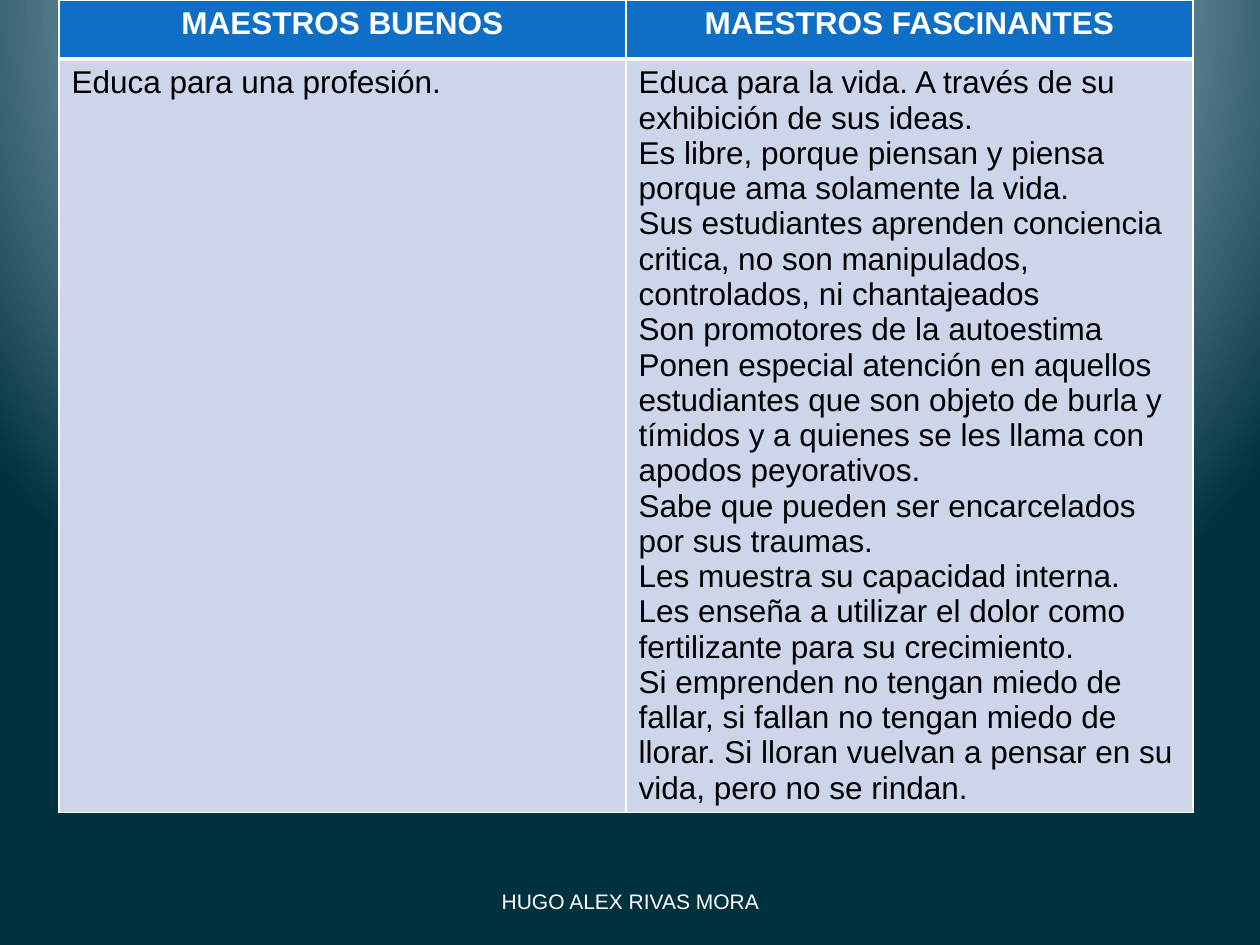
"""Build a slide comparing good teachers with fascinating teachers."""
from dataclasses import dataclass

from lxml import etree
from pptx import Presentation
from pptx.dml.color import RGBColor
from pptx.enum.text import MSO_ANCHOR, PP_ALIGN
from pptx.oxml import parse_xml
from pptx.oxml.ns import nsdecls, qn
from pptx.util import Emu, Pt

CENTER, LEFT = PP_ALIGN.CENTER, PP_ALIGN.LEFT
MIDDLE = MSO_ANCHOR.MIDDLE
EMU_PER_PIXEL = 914400 / 126


@dataclass(frozen=True)
class Theme:
    """Colours, type sizes and line widths of the slide."""
    font: str = "Arial"
    white: str = "FFFFFF"
    black: str = "000000"
    header_fill: str = "0F6FC6"
    body_fill: str = "CCD5EA"
    table_size: int = 18
    footer_size: int = 12
    thin: int = 1
    thick: int = 3
    gradient: tuple = ((0, "BFD5E4"), (40, "B4CEE0"), (100, "00313F"))


@dataclass(frozen=True)
class TextStyle:
    """Look of the text in a frame."""
    color: str
    size: int
    bold: bool = False
    alignment: PP_ALIGN = LEFT


@dataclass(frozen=True)
class RowStyle:
    """Look of one table row."""
    height: int
    fill: str
    text: TextStyle
    top: int
    bottom: int


@dataclass(frozen=True)
class Column:
    """Heading and statements about one kind of teacher."""
    heading: str
    statements: tuple


THEME = Theme()
HEADER = RowStyle(59, THEME.header_fill,
                  TextStyle(THEME.white, THEME.table_size, True, CENTER),
                  THEME.thin, THEME.thick)
BODY = RowStyle(679, THEME.body_fill, TextStyle(THEME.black, THEME.table_size),
                THEME.thick, THEME.thin)
COLUMN_WIDTH = 567
COLUMNS = (
    Column("MAESTROS BUENOS", ("Educa para una profesión.",)),
    Column("MAESTROS FASCINANTES", (
        "Educa para la vida. A través de su exhibición de sus ideas.",
        "Es libre, porque piensan y piensa porque ama solamente la vida.",
        "Sus estudiantes aprenden conciencia critica, no son manipulados, "
        "controlados, ni chantajeados",
        "Son promotores de la autoestima",
        "Ponen especial atención en aquellos estudiantes que son objeto de burla "
        "y tímidos y a quienes se les llama con apodos peyorativos.",
        "Sabe que pueden ser encarcelados por sus traumas.",
        "Les muestra su capacidad interna.",
        "Les enseña a utilizar el dolor como fertilizante para su crecimiento.",
        "Si emprenden no tengan miedo de fallar, si fallan no tengan miedo de "
        "llorar. Si lloran vuelvan a pensar en su vida, pero no se rindan.",
    )),
)


def px(length: int) -> Emu:
    """Turn pixels into EMU."""
    return Emu(round(length * EMU_PER_PIXEL))


def write_text(text_frame, lines: tuple, style: TextStyle) -> None:
    """Write one formatted paragraph for each line."""
    text_frame.text = "\n".join(lines)
    font_format = {"name": THEME.font, "size": Pt(style.size), "bold": style.bold}
    for paragraph in text_frame.paragraphs:
        paragraph.alignment = style.alignment
        for run in paragraph.runs:
            for name, value in font_format.items():
                setattr(run.font, name, value)
            run.font.color.rgb = RGBColor.from_string(style.color)


def draw_background(slide) -> None:
    """Fill the background with a circular gradient centred above and below."""
    stops = "".join(
        f'<a:gs pos="{position * 1000}"><a:srgbClr val="{color}"/></a:gs>'
        for position, color in THEME.gradient)
    background = parse_xml(
        f'<p:bg {nsdecls("p", "a")}><p:bgPr><a:gradFill rotWithShape="1">'
        f'<a:gsLst>{stops}</a:gsLst><a:path path="circle">'
        '<a:fillToRect l="50000" t="-80000" r="50000" b="180000"/></a:path>'
        '</a:gradFill><a:effectLst/></p:bgPr></p:bg>')
    slide.element.cSld.insert(0, background)


def draw_borders(cell, style: RowStyle) -> None:
    """Give a cell white lines on its four sides."""
    properties = cell._tc.get_or_add_tcPr()
    widths = {"a:lnL": THEME.thin, "a:lnR": THEME.thin,
              "a:lnT": style.top, "a:lnB": style.bottom}
    for side, width in widths.items():
        line = etree.SubElement(properties, qn(side), w=str(Pt(width)))
        fill = etree.SubElement(line, qn("a:solidFill"))
        etree.SubElement(fill, qn("a:srgbClr"), val=THEME.white)


def draw_cell(cell, lines: tuple, style: RowStyle) -> None:
    """Draw the lines, fill and text of a cell."""
    draw_borders(cell, style)
    cell.fill.solid()
    cell.fill.fore_color.rgb = RGBColor.from_string(style.fill)
    write_text(cell.text_frame, lines, style.text)


def draw_table(slide) -> None:
    """Draw the comparison table."""
    row_styles = (HEADER, BODY)
    table = slide.shapes.add_table(
        len(row_styles), len(COLUMNS), px(59), px(0),
        px(COLUMN_WIDTH * len(COLUMNS)),
        px(sum(style.height for style in row_styles))).table
    for row, style in zip(table.rows, row_styles):
        row.height = px(style.height)
    for index, column in enumerate(COLUMNS):
        table.columns[index].width = px(COLUMN_WIDTH)
        draw_cell(table.cell(0, index), (column.heading,), HEADER)
        draw_cell(table.cell(1, index), column.statements, BODY)


def draw_footer(slide) -> None:
    """Draw the author's name under the table."""
    footer = slide.shapes.add_textbox(px(431), px(876), px(399), px(50))
    footer.text_frame.word_wrap = True
    footer.text_frame.vertical_anchor = MIDDLE
    write_text(footer.text_frame, ("HUGO ALEX RIVAS MORA",),
               TextStyle(THEME.white, THEME.footer_size, alignment=CENTER))


def main() -> None:
    """Build and save the presentation."""
    presentation = Presentation()
    presentation.slide_width, presentation.slide_height = px(1260), px(945)
    slide = presentation.slides.add_slide(presentation.slide_layouts[6])
    draw_background(slide)
    draw_table(slide)
    draw_footer(slide)
    presentation.save("out.pptx")


if __name__ == "__main__":
    main()
